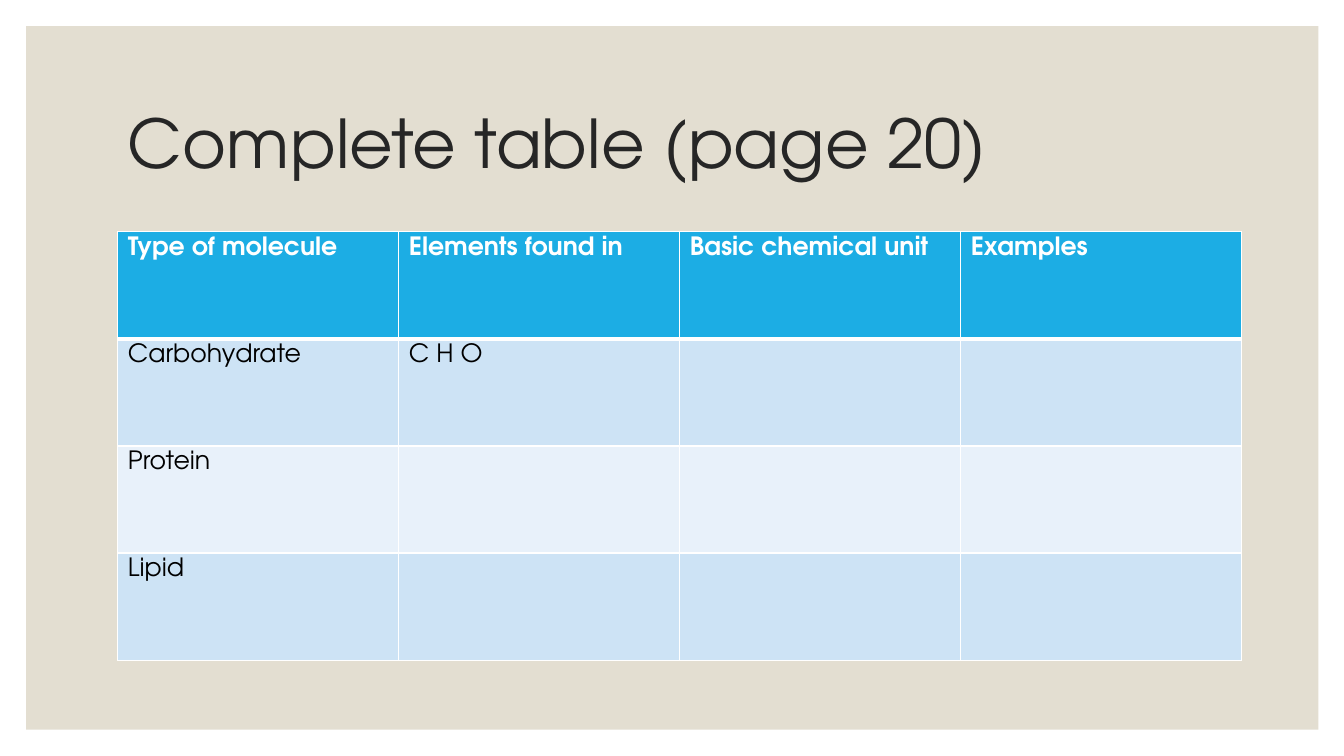
from lxml.etree import SubElement
from pptx import Presentation
from pptx.dml.color import RGBColor
from pptx.enum.shapes import MSO_SHAPE
from pptx.enum.text import MSO_ANCHOR
from pptx.oxml.ns import qn
from pptx.util import Pt

WHITE = RGBColor(0xFF, 0xFF, 0xFF)
BLACK = RGBColor(0x00, 0x00, 0x00)
SAND = RGBColor(0xE3, 0xDE, 0xD1)
CHARCOAL = RGBColor(0x26, 0x26, 0x26)
HEADER_BLUE = RGBColor(0x1C, 0xAD, 0xE4)
BAND_BLUE = RGBColor(0xCD, 0xE3, 0xF5)
BAND_PALE = RGBColor(0xE8, 0xF1, 0xFA)
FONT = "TeX Gyre Adventor"

MOLECULES = [
    ["Type of molecule", "Elements found in", "Basic chemical unit", "Examples"],
    ["Carbohydrate", "C H O", "", ""],
    ["Protein", "", "", ""],
    ["Lipid", "", "", ""],
]


def style_font(font, size, color, bold=False):
    font.name, font.size, font.bold = FONT, Pt(size), bold
    font.color.rgb = color


def add_border(cell, side, width):
    line = SubElement(cell._tc.get_or_add_tcPr(), qn(f"a:ln{side}"), w=str(Pt(width)))
    SubElement(SubElement(line, qn("a:solidFill")), qn("a:srgbClr"), val=str(WHITE))


prs = Presentation()
prs.slide_width, prs.slide_height = Pt(960), Pt(540)
slide = prs.slides.add_slide(prs.slide_layouts[6])

# Sand panel inside a white frame
panel = slide.shapes.add_shape(MSO_SHAPE.RECTANGLE, Pt(18.7), Pt(18.7), Pt(923), Pt(502.5))
panel.shadow.inherit = False
panel.fill.solid()
panel.fill.fore_color.rgb = SAND
panel.line.fill.background()

# Title
title = slide.shapes.add_textbox(Pt(84.2), Pt(51), Pt(792), Pt(108)).text_frame
title.word_wrap = True
title.vertical_anchor = MSO_ANCHOR.MIDDLE
heading = title.paragraphs[0]
heading.line_spacing = 0.9
heading_run = heading.add_run()
heading_run.text = "Complete table (page 20)"
style_font(heading_run.font, 48, CHARCOAL)

# Molecule table
table = slide.shapes.add_table(
    len(MOLECULES), len(MOLECULES[0]), Pt(84.2), Pt(165.6), Pt(802.8), Pt(306)
).table
for column in table.columns:
    column.width = Pt(200.7)
for row in table.rows:
    row.height = Pt(76.5)

for r, labels in enumerate(MOLECULES):
    is_header = r == 0
    band = HEADER_BLUE if is_header else (BAND_PALE, BAND_BLUE)[r % 2]
    widths = {"L": 1, "R": 1, "T": 3 if r == 1 else 1, "B": 3 if is_header else 1}
    for c, label in enumerate(labels):
        cell = table.cell(r, c)
        for side, width in widths.items():
            add_border(cell, side, width)
        cell.fill.solid()
        cell.fill.fore_color.rgb = band
        cell.text = label
        for run in cell.text_frame.paragraphs[0].runs:
            style_font(run.font, 18, WHITE if is_header else BLACK, is_header)

prs.save("out.pptx")
